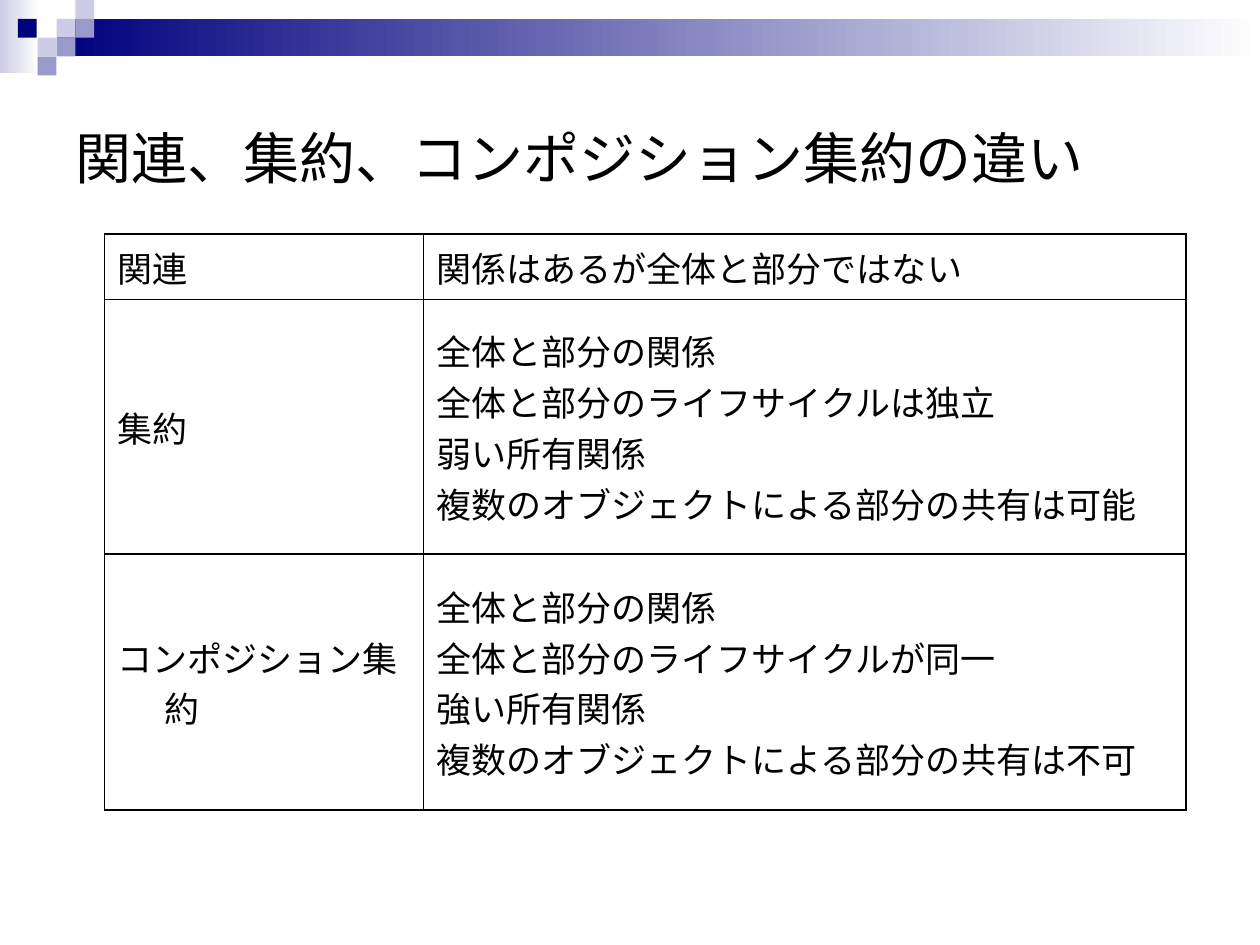
"""Build a slide comparing association, aggregation and composition in a table."""
from dataclasses import dataclass

from lxml.etree import SubElement
from pptx import Presentation
from pptx.dml.color import RGBColor
from pptx.enum.shapes import MSO_SHAPE
from pptx.enum.text import MSO_ANCHOR, PP_ALIGN
from pptx.oxml.ns import qn
from pptx.util import Cm, Pt


@dataclass(frozen=True)
class Theme:
    navy: str = "00007D"
    violet: str = "9999CC"
    lilac: str = "CCCCE6"
    white: str = "FFFFFF"
    black: str = "000000"
    title_font: str = "Arial"
    body_font: str = "Noto Sans CJK JP"
    title_size: int = 32
    body_size: int = 20
    border_width: int = 1


theme = Theme()


def add_block(left, top, width, height, color, fade=False):
    block = slide.shapes.add_shape(
        MSO_SHAPE.RECTANGLE, Cm(left), Cm(top), Cm(width), Cm(height))
    block.shadow.inherit = False
    block.line.fill.background()
    if fade:
        block.fill.gradient()
        block.fill.gradient_angle = 0
        for stop, position, shade in zip(
                block.fill.gradient_stops, (0, 1), (color, theme.white)):
            stop.position = position
            stop.color.rgb = RGBColor.from_string(shade)
    else:
        block.fill.solid()
        block.fill.fore_color.rgb = RGBColor.from_string(color)


def style_paragraph(para, font_name, size):
    para.alignment = PP_ALIGN.LEFT
    para.font.name = font_name
    para.font.size = Pt(size)
    para.font.color.rgb = RGBColor.from_string(theme.black)
    for span in para.runs:
        properties = span.font._element
        SubElement(properties, qn("a:ea"), typeface=theme.body_font)


deck = Presentation()
deck.slide_width, deck.slide_height = Cm(25.4), Cm(19.05)
slide = deck.slides.add_slide(deck.slide_layouts[5])

add_block(0, 0, 0.79, 1.47, theme.lilac, fade=True)
add_block(1.14, 0.38, 24.26, 0.76, theme.navy, fade=True)
square = 0.38
for left, row, color in (
    (1.14, 1, theme.lilac),
    (1.52, 0, theme.lilac),
    (1.52, 1, theme.violet),
    (0.76, 2, theme.lilac),
    (0.36, 1, theme.navy),
    (1.14, 2, theme.violet),
    (0.76, 3, theme.violet),
):
    add_block(left, row * square, square, square, color)

title = slide.shapes.title
title.left, title.top, title.width, title.height = Cm(1.27), Cm(1.27), Cm(22.86), Cm(3.81)
title.text_frame.text = "関連、集約、コンポジション集約の違い"
title.text_frame.vertical_anchor = MSO_ANCHOR.MIDDLE
style_paragraph(title.text_frame.paragraphs[0], theme.title_font, theme.title_size)

comparison = (
    ("関連", "関係はあるが全体と部分ではない"),
    ("集約", "全体と部分の関係\n全体と部分のライフサイクルは独立\n"
             "弱い所有関係\n複数のオブジェクトによる部分の共有は可能"),
    ("コンポジション集約", "全体と部分の関係\n全体と部分のライフサイクルが同一\n"
                  "強い所有関係\n複数のオブジェクトによる部分の共有は不可"),
)
column_widths = (6.43, 15.37)
row_heights = (1.32, 5.13, 5.16)
table = slide.shapes.add_table(
    len(row_heights), len(column_widths), Cm(2.11), Cm(4.72),
    Cm(sum(column_widths)), Cm(sum(row_heights))).table
table.first_row = False
table.horz_banding = False
for column, width in zip(table.columns, column_widths):
    column.width = Cm(width)
for row, height, texts in zip(table.rows, row_heights, comparison):
    row.height = Cm(height)
    for cell, text in zip(row.cells, texts):
        cell.text = text
        cell.vertical_anchor = MSO_ANCHOR.MIDDLE
        for para in cell.text_frame.paragraphs:
            style_paragraph(para, theme.body_font, theme.body_size)
            indent = para._p.get_or_add_pPr()
            indent.set("marL", str(Cm(0.95)))
            indent.set("indent", str(-Cm(0.95)))
        cell_properties = cell._tc.get_or_add_tcPr()
        for side in ("a:lnL", "a:lnR", "a:lnT", "a:lnB"):
            border = SubElement(cell_properties, qn(side), w=str(Pt(theme.border_width)))
            border_fill = SubElement(border, qn("a:solidFill"))
            SubElement(border_fill, qn("a:srgbClr"), val=theme.black)
        cell.fill.background()

deck.save("out.pptx")
